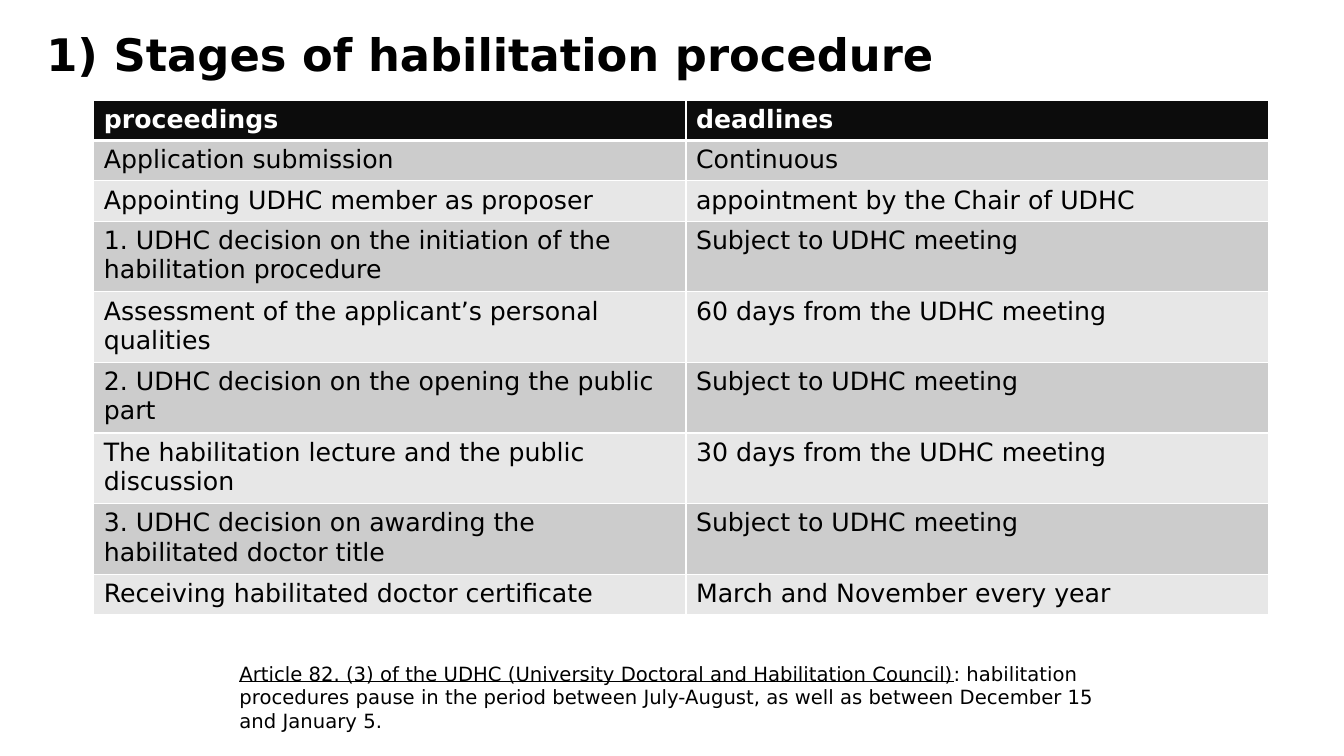
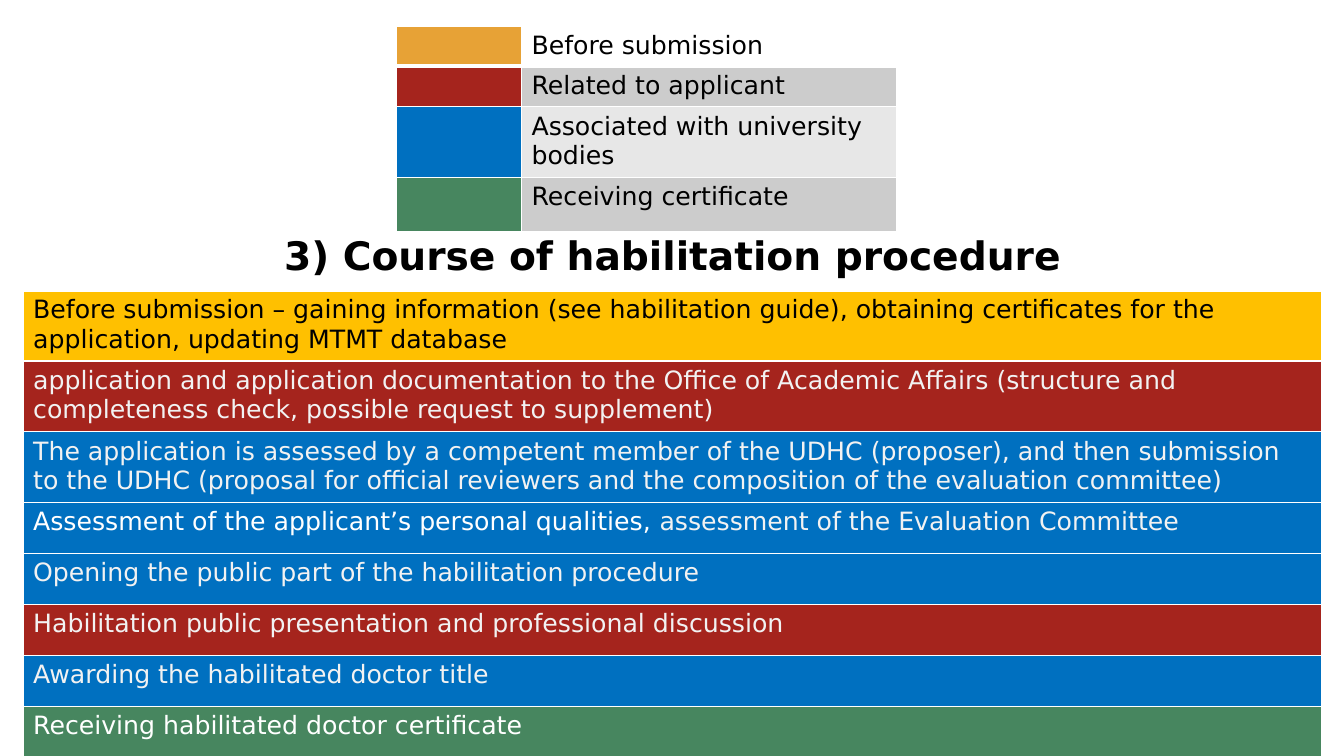
import pptx
import pptx.util
import pptx.dml.color
import pptx.enum.text
import pptx.oxml
import pptx.oxml.ns

Pt = pptx.util.Pt
RGBColor = pptx.dml.color.RGBColor

FONT = "DejaVu Sans"
BLACK = RGBColor(0x00, 0x00, 0x00)
WHITE = RGBColor(0xFF, 0xFF, 0xFF)
PALE = RGBColor(0xF2, 0xF2, 0xF2)
HEADER = RGBColor(0x0C, 0x0C, 0x0C)
BAND_DARK = RGBColor(0xCC, 0xCC, 0xCC)
BAND_LIGHT = RGBColor(0xE7, 0xE7, 0xE7)
ORANGE = RGBColor(0xE7, 0xA2, 0x36)
YELLOW = RGBColor(0xFF, 0xC0, 0x00)
RED = RGBColor(0xA5, 0x24, 0x1D)
BLUE = RGBColor(0x00, 0x70, 0xC0)
GREEN = RGBColor(0x47, 0x86, 0x5F)

ONE_LINE, TWO_LINES = 28, 49


def write(para, parts, size=18, color=BLACK, bold=False):
    """Put the parts in the paragraph as runs and return the runs."""
    spans = []
    for part in parts:
        span = para.add_run()
        span.text = part
        spans.append(span)
    para.font.name = FONT
    para.font.size = Pt(size)
    para.font.bold = bold
    para.font.color.rgb = color
    return spans


def add_grid(page, left, top, widths, heights):
    """Add a table with white rules, the one below the first row thicker."""
    frame = page.shapes.add_table(len(heights), len(widths), Pt(left), Pt(top),
                                  Pt(sum(widths)), Pt(sum(heights)))
    grid = frame.table
    grid.first_row = False
    grid.horz_banding = False
    for column, width in zip(grid.columns, widths):
        column.width = Pt(width)
    for number, (row, height) in enumerate(zip(grid.rows, heights)):
        row.height = Pt(height)
        for cell in row.cells:
            cell.fill.background()
            properties = cell._tc.get_or_add_tcPr()
            for place, side in enumerate("LRTB"):
                thick = (number, side) in ((0, "B"), (1, "T"))
                properties.insert(place, pptx.oxml.parse_xml(
                    f'<a:ln{side} {pptx.oxml.ns.nsdecls("a")} w="{Pt(3 if thick else 1)}">'
                    f'<a:solidFill><a:srgbClr val="{WHITE}"/></a:solidFill></a:ln{side}>'))
    return grid


deck = pptx.Presentation()
deck.slide_width, deck.slide_height = Pt(960), Pt(540)
blank = deck.slide_layouts[6]

# Stages and deadlines
page = deck.slides.add_slide(blank)
box = page.shapes.add_textbox(Pt(26), Pt(1.5), Pt(907), Pt(78)).text_frame
box.word_wrap = True
box.vertical_anchor = pptx.enum.text.MSO_ANCHOR.MIDDLE
box.paragraphs[0].line_spacing = 0.9
write(box.paragraphs[0], ["1) Stages of habilitation procedure"], 32, bold=True)

MEETING = "Subject to UDHC meeting"
stages = [
    ("proceedings", "deadlines", ONE_LINE),
    ("Application submission", "Continuous", ONE_LINE),
    ("Appointing UDHC member as proposer", "appointment by the Chair of UDHC", ONE_LINE),
    ("1. UDHC decision on the initiation of the habilitation procedure", MEETING, TWO_LINES),
    ("Assessment of the applicant’s personal qualities",
     "60 days from the UDHC meeting", TWO_LINES),
    ("2. UDHC decision on the opening the public part", MEETING, TWO_LINES),
    ("The habilitation lecture and the public discussion",
     "30 days from the UDHC meeting", TWO_LINES),
    ("3. UDHC decision on awarding the habilitated doctor title", MEETING, TWO_LINES),
    ("Receiving habilitated doctor certificate", "March and November every year", ONE_LINE),
]
grid = add_grid(page, 67, 71.5, [423, 416], [height for *_, height in stages])
for number, (*texts, _) in enumerate(stages):
    is_header = number == 0
    band = HEADER if is_header else BAND_DARK if number % 2 else BAND_LIGHT
    for cell, text in zip(grid.rows[number].cells, texts):
        cell.fill.solid()
        cell.fill.fore_color.rgb = band
        write(cell.text_frame.paragraphs[0], [text],
              color=WHITE if is_header else BLACK, bold=is_header)

box = page.shapes.add_textbox(Pt(164), Pt(469), Pt(640), Pt(80)).text_frame
box.word_wrap = True
spans = write(box.paragraphs[0], [
    "Article 82. (3) of the UDHC (University Doctoral and Habilitation Council)",
    ": habilitation procedures pause in the period between July-August, "
    "as well as between December 15 and January 5."], 14)
spans[0].font.underline = True

# Course of the procedure
page = deck.slides.add_slide(blank)
steps = [
    (YELLOW, BLACK, 50, ["Before submission – gaining information (see habilitation guide), "
                         "obtaining certificates for the application, updating MTMT database"]),
    (RED, PALE, 50, ["application and application documentation to the Office of Academic Affairs "
                     "(structure and completeness check, possible request to supplement)"]),
    (BLUE, PALE, 50, ["The application is assessed by a competent member of the UDHC (proposer), "
                      "and then submission to the UDHC (proposal for official reviewers and "
                      "the composition of the evaluation committee)"]),
    (BLUE, PALE, 36.4, ["Assessment of the applicant’s personal qualities, ",
                        "assessment of the Evaluation Committee"]),
    (BLUE, PALE, 36.4, ["Opening the public part of the habilitation procedure"]),
    (RED, PALE, 36.4, ["Habilitation public presentation and professional discussion"]),
    (BLUE, PALE, 36.4, ["Awarding the habilitated doctor title"]),
    (GREEN, WHITE, 36.4, ["Receiving habilitated doctor certificate"]),
]
grid = add_grid(page, 16.5, 163.5, [927.5], [44] + [height for _, _, height, _ in steps])
para = grid.cell(0, 0).text_frame.paragraphs[0]
para.alignment = pptx.enum.text.PP_ALIGN.CENTER
write(para, ["3) Course of habilitation procedure"], 28, bold=True)
for number, (fill, color, _, parts) in enumerate(steps, 1):
    cell = grid.cell(number, 0)
    cell.fill.solid()
    cell.fill.fore_color.rgb = fill
    spans = write(cell.text_frame.paragraphs[0], parts, color=color)
    if len(spans) > 1:
        spans[0].font.color.rgb = WHITE

legend = [
    (ORANGE, None, ONE_LINE, "Before submission"),
    (RED, BAND_DARK, ONE_LINE, "Related to applicant"),
    (BLUE, BAND_LIGHT, TWO_LINES, "Associated with university bodies"),
    (GREEN, BAND_DARK, 39, "Receiving certificate"),
]
grid = add_grid(page, 283, 18.5, [89.5, 268], [height for _, _, height, _ in legend])
for row, (swatch, band, _, text) in zip(grid.rows, legend):
    for cell, fill in zip(row.cells, (swatch, band)):
        if fill is not None:
            cell.fill.solid()
            cell.fill.fore_color.rgb = fill
    write(row.cells[1].text_frame.paragraphs[0], [text])

deck.save("out.pptx")
